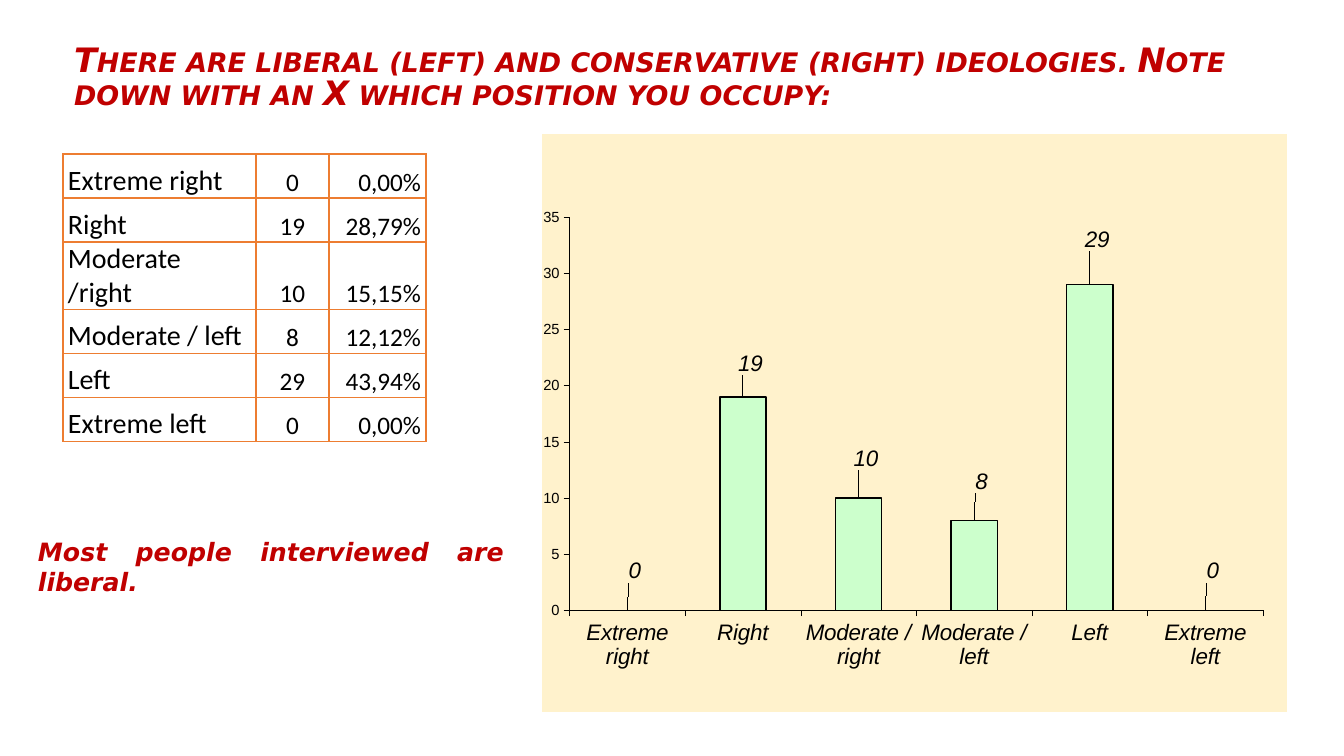
from pptx import Presentation, util as u
from pptx.chart.data import CategoryChartData
from pptx.dml.color import RGBColor
from pptx.enum import chart as ch, text
from pptx.oxml import parse_xml
from pptx.oxml.ns import nsdecls

RED = RGBColor(0xC0, 0x00, 0x00)
BLACK = RGBColor(0x00, 0x00, 0x00)
ORANGE = RGBColor(0xED, 0x7D, 0x31)
CREAM = RGBColor(0xFF, 0xF2, 0xCC)
GREEN = RGBColor(0xCC, 0xFF, 0xCC)

LEFT, CENTER = text.PP_ALIGN.LEFT, text.PP_ALIGN.CENTER
RIGHT, JUSTIFY = text.PP_ALIGN.RIGHT, text.PP_ALIGN.JUSTIFY

QUESTION = ("There are liberal (left) and conservative (right) ideologies. "
            "Note down with an X which position you occupy:")
POSITIONS = [
    ("Extreme right", 0, "0,00%"),
    ("Right", 19, "28,79%"),
    ("Moderate /right", 10, "15,15%"),
    ("Moderate / left", 8, "12,12%"),
    ("Left", 29, "43,94%"),
    ("Extreme left", 0, "0,00%"),
]
# Shift of each value label, as a share of the chart's width and height
LABEL_SHIFTS = [(0.01, -0.04), (0.01, -0.03), (0.01, -0.04),
                (0.01, -0.04), (0.01, -0.05), (0.01, -0.04)]


def px(length):
    return u.Emu(round(length * 12192000 / 1344))


def style_font(font, name, size, color, bold=False, italic=False):
    font.name, font.size = name, u.Pt(size)
    font.bold, font.italic = bold, italic
    font.color.rgb = color


def manual_layout(**values):
    parts = "".join(f'<c:{key} val="{value}"/>' for key, value in values.items())
    return parse_xml(f'<c:layout {nsdecls("c")}><c:manualLayout>{parts}'
                     '</c:manualLayout></c:layout>')


class SurveySlide:
    heading_font, table_font, chart_font = "DejaVu Sans", "Calibri", "Arial"

    def __init__(self, prs):
        self.slide = prs.slides.add_slide(prs.slide_layouts[5])

    def set_heading(self, frame, words, size, align):
        frame.word_wrap = True
        frame.text = words
        paragraph = frame.paragraphs[0]
        paragraph.alignment = align
        run = paragraph.runs[0]
        style_font(run.font, self.heading_font, size, RED, bold=True, italic=True)
        return paragraph

    def title(self, words, x, y, w, h):
        title = self.slide.shapes.title
        title.left, title.top, title.width, title.height = map(px, (x, y, w, h))
        title.text_frame.vertical_anchor = text.MSO_ANCHOR.TOP
        paragraph = self.set_heading(title.text_frame, words, 24, LEFT)
        paragraph.line_spacing = 0.8
        paragraph.space_before = u.Pt(0)
        paragraph.runs[0].font._element.set("cap", "small")

    def note(self, words, x, y, w, h):
        note = self.slide.shapes.add_textbox(*map(px, (x, y, w, h)))
        self.set_heading(note.text_frame, words, 18, JUSTIFY)

    def cell(self, cell, words, size, align):
        cell.text = words
        cell.vertical_anchor = text.MSO_ANCHOR.BOTTOM
        cell.margin_left = cell.margin_right = px(5)
        cell.margin_top = cell.margin_bottom = 0
        paragraph = cell.text_frame.paragraphs[0]
        paragraph.alignment = align
        paragraph.space_before, paragraph.space_after = u.Pt(0), u.Pt(3)
        style_font(paragraph.runs[0].font, self.table_font, size, BLACK)
        cell.fill.background()
        for place, side in enumerate("LRTB"):
            cell._tc.tcPr.insert(place, parse_xml(
                f'<a:ln{side} {nsdecls("a")} w="12700"><a:solidFill>'
                f'<a:srgbClr val="{ORANGE}"/></a:solidFill></a:ln{side}>'))

    def table(self, rows, x, y, col_widths, row_height):
        table = self.slide.shapes.add_table(
            len(rows), len(col_widths), px(x), px(y),
            px(sum(col_widths)), px(row_height * len(rows))).table
        table.first_row = table.horz_banding = False
        for column, width in zip(table.columns, col_widths):
            column.width = px(width)
        columns = [(20, LEFT), (18, CENTER), (18, RIGHT)]
        for r, values in enumerate(rows):
            table.rows[r].height = px(row_height)
            for c, (size, align) in enumerate(columns):
                self.cell(table.cell(r, c), str(values[c]), size, align)

    def axis(self, axis, size, italic):
        axis.has_major_gridlines = False
        axis.major_tick_mark = ch.XL_TICK_MARK.OUTSIDE
        axis.minor_tick_mark = ch.XL_TICK_MARK.NONE
        axis.format.line.color.rgb = BLACK
        axis.format.line.width = u.Pt(0.25)
        style_font(axis.tick_labels.font, self.chart_font, size, BLACK, italic=italic)

    def column_chart(self, rows, x, y, w, h):
        data = CategoryChartData()
        data.categories = [row[0] for row in rows]
        data.add_series("Series 1", [row[1] for row in rows])
        chart = self.slide.shapes.add_chart(
            ch.XL_CHART_TYPE.COLUMN_CLUSTERED, *map(px, (x, y, w, h)), data).chart
        chart.has_legend = chart.has_title = False
        style_font(chart.font, self.chart_font, 10.5, BLACK)

        # Background and plot area
        space = chart._chartSpace
        space.find("{*}chart").addnext(parse_xml(
            f'<c:spPr {nsdecls("c", "a")}><a:solidFill><a:srgbClr val="{CREAM}"/>'
            '</a:solidFill><a:ln><a:noFill/></a:ln></c:spPr>'))
        area = space.find("{*}chart/{*}plotArea")
        for layout in area.findall("{*}layout"):
            area.remove(layout)
        area.insert(0, manual_layout(layoutTarget="inner", xMode="edge", yMode="edge",
                                     x=0.037, y=0.144, w=0.931, h=0.68))

        # Axes
        self.axis(chart.category_axis, 16, True)
        chart.category_axis.tick_label_position = ch.XL_TICK_LABEL_POSITION.LOW
        self.axis(chart.value_axis, 10.5, False)
        chart.value_axis.minimum_scale, chart.value_axis.maximum_scale = 0, 35
        chart.value_axis.major_unit = 5

        # Columns and their values
        plot = chart.plots[0]
        plot.gap_width, plot.vary_by_categories = 150, False
        series = plot.series[0]
        series.format.fill.solid()
        series.format.fill.fore_color.rgb = GREEN
        series.format.line.color.rgb = BLACK
        series.format.line.width = u.Pt(1)
        for i, (dx, dy) in enumerate(LABEL_SHIFTS):
            label = series.points[i].data_label
            style_font(label.font, self.chart_font, 16, BLACK, italic=True)
            label.position = ch.XL_LABEL_POSITION.OUTSIDE_END
            index = space.xpath(f".//c:dLbl/c:idx[@val='{i}']")[0]
            index.addnext(manual_layout(x=dx, y=dy))


def main():
    prs = Presentation()
    prs.slide_width, prs.slide_height = px(1344), px(756)
    survey = SurveySlide(prs)
    survey.title(QUESTION, 64, 42, 1198, 78)
    survey.note("Most people interviewed are liberal.", 28, 531, 486, 72)
    survey.table(POSITIONS, 63, 154, [193, 73, 97], 44)
    survey.column_chart(POSITIONS, 542, 134, 745, 578)
    prs.save("out.pptx")


if __name__ == "__main__":
    main()
